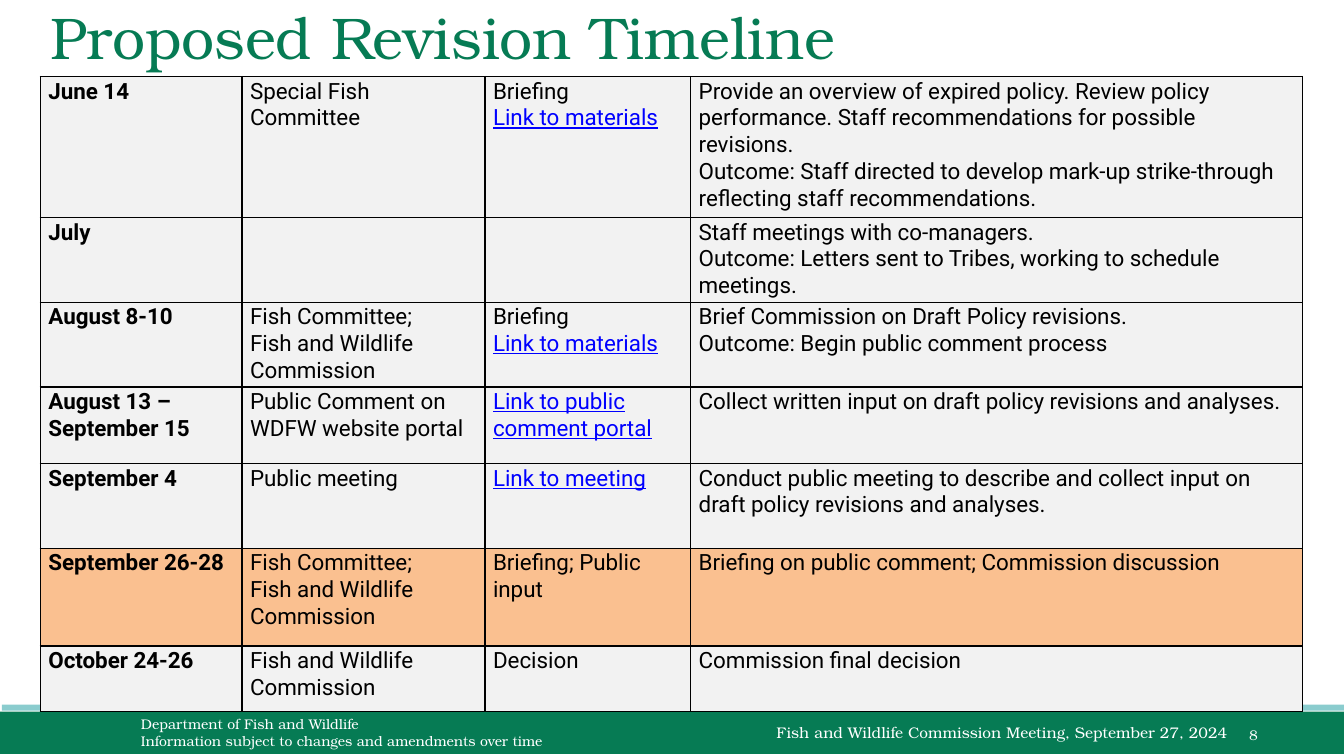
from dataclasses import dataclass

import pptx
import pptx.dml.color
import pptx.enum.shapes
import pptx.enum.text
import pptx.oxml
import pptx.oxml.ns
import pptx.util
from pptx.util import Inches

Anchor = pptx.enum.text.MSO_ANCHOR
Align = pptx.enum.text.PP_ALIGN


@dataclass(frozen=True)
class Theme:
    green: str = "067B54"
    teal: str = "8ACCCE"
    white: str = "FFFFFF"
    black: str = "000000"
    link: str = "0000FF"
    grey: str = "F2F2F2"
    orange: str = "FAC090"
    serif: str = "TeX Gyre Bonum"
    sans: str = "Roboto"
    title_size: int = 42
    table_size: int = 16
    meeting_size: int = 11
    footer_size: int = 10
    border_width: int = 1
    table_spacing: float = 1.03


THEME = Theme()


@dataclass(frozen=True)
class Area:
    left: float
    top: float
    width: float
    height: float

    def lengths(self) -> tuple:
        return tuple(Inches(side) for side in (self.left, self.top, self.width, self.height))


@dataclass(frozen=True)
class Band:
    area: Area
    color: str
    text: str = ""


@dataclass(frozen=True)
class Label:
    area: Area
    text: str
    size: int
    color: str
    anchor: Anchor = Anchor.MIDDLE


@dataclass(frozen=True)
class Milestone:
    height: float
    date: str
    group: str
    action: str
    detail: str
    fill: str = THEME.grey


BANDS = [
    Band(Area(0, 7.06, 13.33, 0.42), THEME.green,
         "Fish and Wildlife Commission Meeting, September 27, 2024"),
    Band(Area(0.02, 6.99, 13.33, 0.06), THEME.teal),
]

LABELS = [
    Label(Area(1.3, 7.12, 4.22, 0.3),
          "Department of Fish and Wildlife\n"
          "Information subject to changes and amendments over time",
          THEME.footer_size, THEME.white),
    Label(Area(12.29, 7.16, 1.28, 0.27), "8", THEME.footer_size, THEME.white, Anchor.TOP),
    Label(Area(0.4, -0.14, 12, 1), "Proposed Revision Timeline",
          THEME.title_size, THEME.green),
]

COLUMN_WIDTHS = [2, 2.41, 2.04, 6.07]

MILESTONES = [
    Milestone(1.4, "June 14", "Special Fish Committee", "Briefing\nLink to materials",
              "Provide an overview of expired policy. Review policy performance. "
              "Staff recommendations for possible revisions.\n"
              "Outcome: Staff directed to develop mark-up strike-through reflecting "
              "staff recommendations."),
    Milestone(0.84, "July", "", "",
              "Staff meetings with co-managers.\n"
              "Outcome: Letters sent to Tribes, working to schedule meetings."),
    Milestone(0.84, "August 8-10", "Fish Committee;\nFish and Wildlife Commission",
              "Briefing\nLink to materials",
              "Brief Commission on Draft Policy revisions.\n"
              "Outcome: Begin public comment process"),
    Milestone(0.76, "August 13 – September 15", "Public Comment on WDFW website portal",
              "Link to public comment portal",
              "Collect written input on draft policy revisions and analyses."),
    Milestone(0.84, "September 4", "Public meeting", "Link to meeting",
              "Conduct public meeting to describe and collect input on draft policy "
              "revisions and analyses."),
    Milestone(0.97, "September 26-28", "Fish Committee;\nFish and Wildlife Commission",
              "Briefing; Public input",
              "Briefing on public comment; Commission discussion", THEME.orange),
    Milestone(0.65, "October 24-26", "Fish and Wildlife Commission", "Decision",
              "Commission final decision"),
]


def rgb(color: str) -> pptx.dml.color.RGBColor:
    return pptx.dml.color.RGBColor.from_string(color)


def style_spans(para, font: str, size: int, color: str,
                bold: bool = False, underline: bool = False) -> None:
    for span in para.runs:
        span.font.name = font
        span.font.size = pptx.util.Pt(size)
        span.font.color.rgb = rgb(color)
        span.font.bold = bold
        span.font.underline = underline


def draw_band(page, band: Band) -> None:
    shape = page.shapes.add_shape(pptx.enum.shapes.MSO_SHAPE.RECTANGLE, *band.area.lengths())
    shape.shadow.inherit = False
    shape.fill.solid()
    shape.fill.fore_color.rgb = rgb(band.color)
    shape.line.fill.background()
    if band.text:
        frame = shape.text_frame
        frame.text = band.text
        frame.vertical_anchor = Anchor.MIDDLE
        frame.margin_right = Inches(1.15)
        frame.paragraphs[0].alignment = Align.RIGHT
        style_spans(frame.paragraphs[0], THEME.serif, THEME.meeting_size, THEME.white)


def draw_label(page, label: Label) -> None:
    frame = page.shapes.add_textbox(*label.area.lengths()).text_frame
    frame.word_wrap = True
    frame.vertical_anchor = label.anchor
    frame.text = label.text
    for para in frame.paragraphs:
        style_spans(para, THEME.serif, label.size, label.color)


def add_borders(cell) -> None:
    properties = cell._tc.get_or_add_tcPr()
    for position, side in enumerate(("lnL", "lnR", "lnT", "lnB")):
        border = pptx.oxml.parse_xml(
            f'<a:{side} {pptx.oxml.ns.nsdecls("a")} w="{pptx.util.Pt(THEME.border_width)}">'
            f'<a:solidFill><a:srgbClr val="{THEME.black}"/></a:solidFill></a:{side}>')
        properties.insert(position, border)


def fill_cell(cell, text: str, fill: str, bold: bool) -> None:
    cell.fill.solid()
    cell.fill.fore_color.rgb = rgb(fill)
    cell.margin_left = cell.margin_right = Inches(0.08)
    cell.margin_top = Inches(0.01)
    cell.margin_bottom = 0
    cell.text_frame.text = text
    for para in cell.text_frame.paragraphs:
        para.line_spacing = THEME.table_spacing
        is_link = para.text.startswith("Link to")
        color = THEME.link if is_link else THEME.black
        style_spans(para, THEME.sans, THEME.table_size, color, bold, is_link)
    add_borders(cell)


def draw_timeline(page) -> None:
    area = Area(0.4, 0.76, sum(COLUMN_WIDTHS), sum(step.height for step in MILESTONES))
    table = page.shapes.add_table(
        len(MILESTONES), len(COLUMN_WIDTHS), *area.lengths()).table
    table.first_row = False
    table.horz_banding = False
    for column, width in zip(table.columns, COLUMN_WIDTHS):
        column.width = Inches(width)
    for row, step in zip(table.rows, MILESTONES):
        row.height = Inches(step.height)
        texts = (step.date, step.group, step.action, step.detail)
        for index, (cell, text) in enumerate(zip(row.cells, texts)):
            fill_cell(cell, text, step.fill, bold=index == 0)


def main() -> None:
    deck = pptx.Presentation()
    deck.slide_width = Inches(13.33)
    deck.slide_height = Inches(7.5)
    page = deck.slides.add_slide(deck.slide_layouts[6])
    for band in BANDS:
        draw_band(page, band)
    for label in LABELS:
        draw_label(page, label)
    draw_timeline(page)
    deck.save("out.pptx")


if __name__ == "__main__":
    main()
